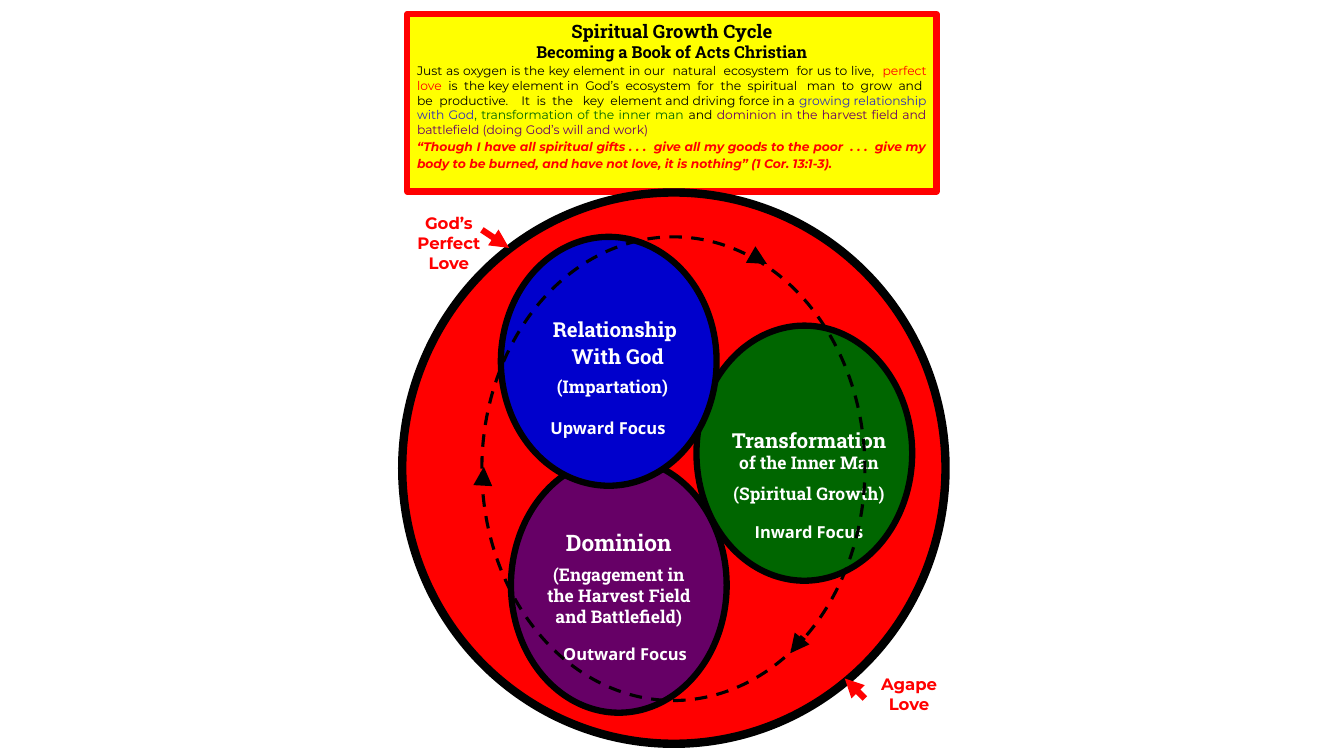
"""Build the Spiritual Growth Cycle slide."""
from lxml import etree
from pptx import Presentation
from pptx.dml.color import RGBColor
from pptx.enum.dml import MSO_LINE
from pptx.enum.shapes import MSO_CONNECTOR, MSO_SHAPE
from pptx.enum.text import MSO_ANCHOR, PP_ALIGN
from pptx.oxml.ns import qn
from pptx.util import Pt

RECTANGLE, OVAL = MSO_SHAPE.RECTANGLE, MSO_SHAPE.OVAL
STRAIGHT, DASH = MSO_CONNECTOR.STRAIGHT, MSO_LINE.DASH
TOP, CENTER, JUSTIFY = MSO_ANCHOR.TOP, PP_ALIGN.CENTER, PP_ALIGN.JUSTIFY

BLACK = RGBColor(0x00, 0x00, 0x00)
WHITE = RGBColor(0xFF, 0xFF, 0xFF)
RED = RGBColor(0xFF, 0x00, 0x00)
YELLOW = RGBColor(0xFF, 0xFF, 0x00)
BLUE = RGBColor(0x00, 0x00, 0xCC)
SOFT_BLUE = RGBColor(0x2D, 0x2D, 0xB9)
GREEN = RGBColor(0x00, 0x66, 0x00)
PURPLE = RGBColor(0x66, 0x00, 0x66)

SLAB, SANS, MONTSERRAT = "Roboto Slab", "Open Sans", "Montserrat"
LINE_RATIO = 1.19
LABEL_WIDTH = 160

INTRODUCTION = [
    ("Just as oxygen is the key element in our  natural  ecosystem  for us to live,  ", BLACK),
    ("perfect love  ", RED),
    ("is  the key element in  God’s  ecosystem  for  the  spiritual   man  to  grow  and  "
     "be  productive.    It  is  the   key  element and driving force in a ", BLACK),
    ("growing relationship with God", SOFT_BLUE),
    (", transformation of the inner man ", GREEN),
    ("and ", BLACK),
    ("dominion in the harvest field and battlefield (doing God’s will and work)", PURPLE),
]
QUOTE = ("“Though I have all spiritual gifts . . .  give all my goods to the poor  . . .  "
         "give my body to be burned, and have not love, it is nothing” (1 Cor. 13:1-3).")

STAGES = [
    (PURPLE, (365, 326.9, 154.1, 182.2), (442, 378.1), [
        ("Dominion", dict(size=16.2)),
        ("(Engagement in", dict(size=12.5, gap=5.5)),
        ("the Harvest Field", dict(size=12.5)),
        ("and Battlefield)", dict(size=12.5)),
        ("Outward Focus", dict(size=11.8, font=SANS, gap=12.5, indent=9)),
    ]),
    (GREEN, (497.5, 232.6, 154.1, 182.2), (577.9, 305.8), [
        ("Transformation", dict(size=14.7)),
        ("of the Inner Man", dict(size=12.5)),
        ("(Spiritual Growth)", dict(size=12.5, gap=7.2)),
        ("Inward Focus", dict(size=11.8, font=SANS, gap=12.5)),
    ]),
    (BLUE, (357.8, 169.2, 154.1, 177.8), (434.3, 226.5), [
        ("Relationship", dict(size=14.7, indent=10)),
        ("With God", dict(size=14.7, gap=1.9, indent=14)),
        ("(Impartation)", dict(size=12.5, gap=5.2, indent=6.4)),
        ("Upward Focus", dict(size=11.8, font=SANS, gap=15.3)),
    ]),
]
LOVE_LABELS = [
    ((320.7, 152.6), ["God’s", "Perfect", "Love"]),
    ((649.4, 481.9), ["Agape", "Love"]),
]
ARROWS = [
    (BLACK, (573.8, 455, 564.5, 466.6)),
    (BLACK, (539.3, 183.6, 547.9, 188.6)),
    (BLACK, (344.9, 346.3, 345.6, 333.4)),
    (RED, (344.2, 164.2, 363.6, 177.1)),
    (RED, (617.8, 499, 603.4, 484.6)),
]


def write_paragraph(frame, text, *, size, font=SLAB, color=WHITE, bold=True, italic=False,
                    align=CENTER, gap=0, indent=0, spacing=1):
    """Append a paragraph given as a string or as (text, color) runs."""
    paragraph = frame.paragraphs[0]
    if paragraph.runs:
        paragraph = frame.add_paragraph()
    paragraph.alignment = align
    paragraph.space_before = Pt(gap)
    paragraph.line_spacing = Pt(round(size * LINE_RATIO * spacing, 1))
    if indent:
        paragraph._p.get_or_add_pPr().set("marL", str(Pt(indent)))
    for words, run_color in [(text, color)] if isinstance(text, str) else text:
        run = paragraph.add_run()
        run.text = words
        run.font.name = font
        run.font.size = Pt(size)
        run.font.bold = bold
        run.font.italic = italic
        run.font.color.rgb = run_color


def prepare_frame(shape, left=0, top=0, right=0):
    """Set the insets, wrapping and anchor of a shape and return its text frame."""
    frame = shape.text_frame
    frame.word_wrap = True
    frame.vertical_anchor = TOP
    frame.margin_left, frame.margin_top = Pt(left), Pt(top)
    frame.margin_right, frame.margin_bottom = Pt(right), Pt(0)
    return frame


def add_outlined_shape(slide, kind, box, fill, line_color, line_width):
    """Add a preset shape; a fill of None leaves it hollow."""
    shape = slide.shapes.add_shape(kind, *map(Pt, box))
    shape.shadow.inherit = False
    if fill is None:
        shape.fill.background()
    else:
        shape.fill.solid()
        shape.fill.fore_color.rgb = fill
    shape.line.color.rgb = line_color
    shape.line.width = Pt(line_width)
    return shape


def add_label(slide, center, top, lines):
    """Add centred lines of text around a vertical axis."""
    height = sum(style["size"] * LINE_RATIO + style.get("gap", 0) for _, style in lines)
    box = slide.shapes.add_textbox(Pt(center - LABEL_WIDTH / 2), Pt(top),
                                   Pt(LABEL_WIDTH), Pt(height))
    frame = prepare_frame(box)
    for text, style in lines:
        write_paragraph(frame, text, **style)


def add_arrow(slide, color, ends):
    """Add a thick dashed line with a triangle at its end."""
    arrow = slide.shapes.add_connector(STRAIGHT, *map(Pt, ends))
    arrow.line.color.rgb = color
    arrow.line.width = Pt(4.5)
    arrow.line.dash_style = DASH
    etree.SubElement(arrow.line._get_or_add_ln(), qn("a:tailEnd"), type="triangle")
    etree.SubElement(arrow._element.spPr, qn("a:effectLst"))


def add_introduction(slide):
    """Add the yellow box with the title, the explanation and the quote."""
    box = add_outlined_shape(slide, RECTANGLE, (290.9, 10.1, 378, 126.7), YELLOW, RED, 4.5)
    frame = prepare_frame(box, left=7, top=4.6, right=7)
    write_paragraph(frame, "Spiritual Growth Cycle", size=13.2, color=BLACK)
    write_paragraph(frame, "Becoming a Book of Acts Christian", size=11.8, color=BLACK)
    write_paragraph(frame, INTRODUCTION, size=8.8, font=MONTSERRAT, bold=False,
                    align=JUSTIFY, gap=1)
    write_paragraph(frame, QUOTE, size=8.8, font=MONTSERRAT, color=RED, italic=True,
                    align=JUSTIFY, spacing=1.15)


def main():
    """Build and save the presentation."""
    presentation = Presentation()
    presentation.slide_width, presentation.slide_height = Pt(960), Pt(540)
    slide = presentation.slides.add_slide(presentation.slide_layouts[6])

    add_introduction(slide)
    add_outlined_shape(slide, OVAL, (287.3, 137.5, 388.1, 393.8), RED, BLACK, 6)
    for color, box, (center, top), lines in STAGES:
        add_outlined_shape(slide, OVAL, box, color, BLACK, 4.5)
        add_label(slide, center, top, lines)
    cycle = add_outlined_shape(slide, OVAL, (344.2, 169.2, 273.6, 331.2), None, BLACK, 2.25)
    cycle.line.dash_style = DASH
    for (center, top), words in LOVE_LABELS:
        style = dict(size=11.8, font=MONTSERRAT, color=RED)
        add_label(slide, center, top, [(word, style) for word in words])
    for color, ends in ARROWS:
        add_arrow(slide, color, ends)

    presentation.save("out.pptx")


if __name__ == "__main__":
    main()
